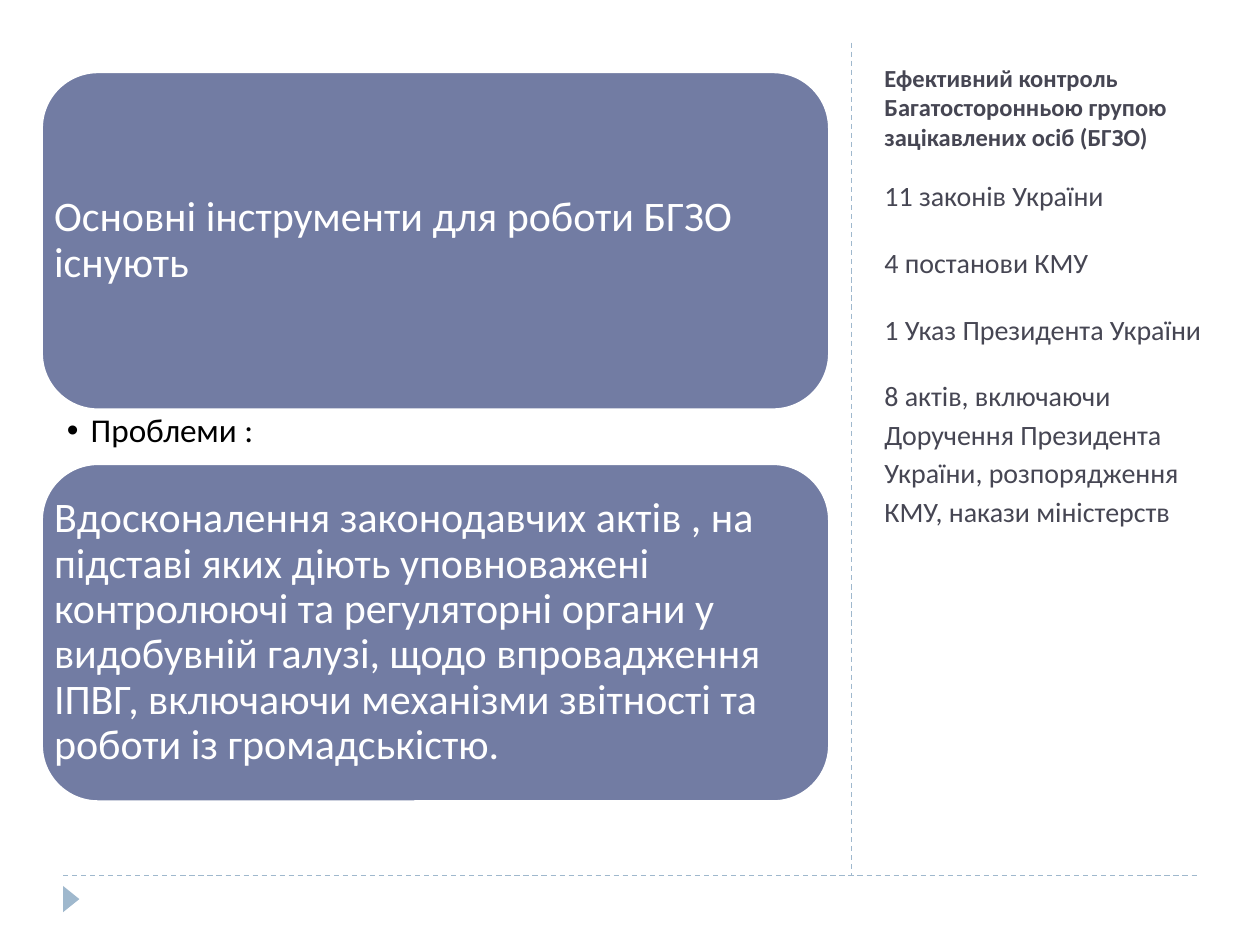
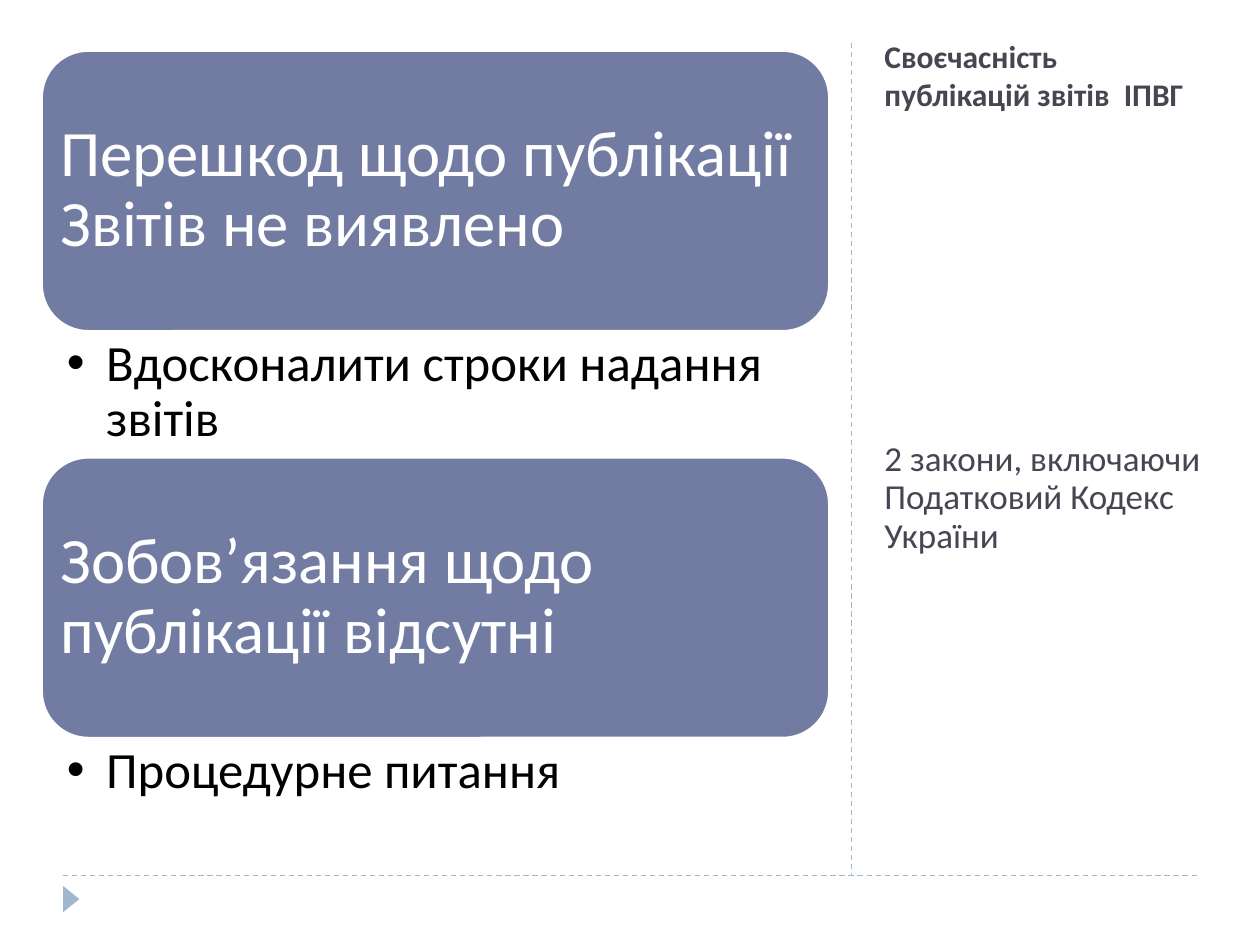
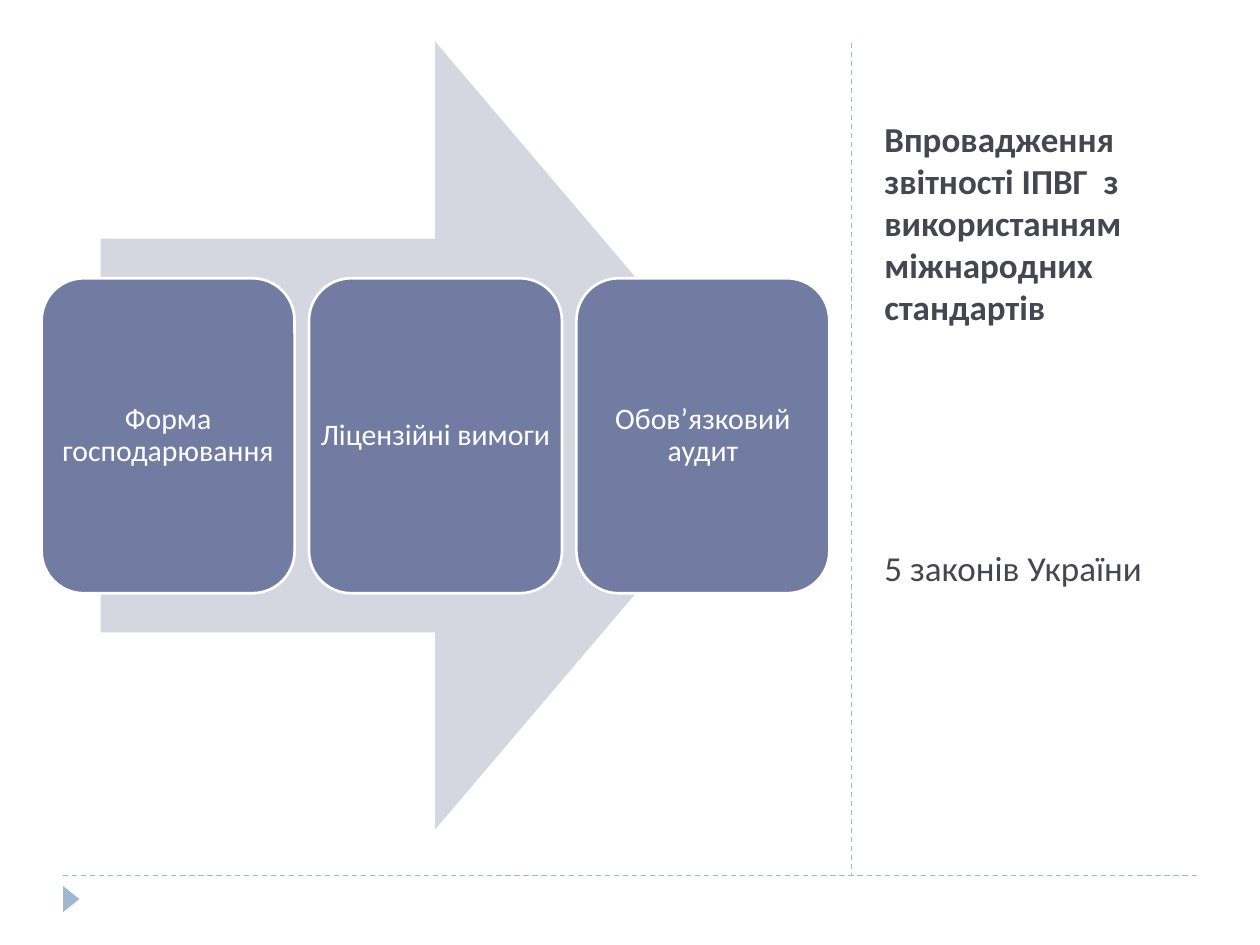
import dataclasses
import typing

import lxml.etree
import pptx
import pptx.dml.color
import pptx.enum.dml
import pptx.enum.shapes
import pptx.enum.text
import pptx.oxml.ns
import pptx.presentation
import pptx.shapes.autoshape
import pptx.slide
import pptx.text.text
import pptx.util

Cm = pptx.util.Cm
Pt = pptx.util.Pt
RGBColor = pptx.dml.color.RGBColor
Shape = pptx.enum.shapes.MSO_SHAPE
Anchor = pptx.enum.text.MSO_ANCHOR
Align = pptx.enum.text.PP_ALIGN

WHITE = RGBColor(0xFF, 0xFF, 0xFF)
BLACK = RGBColor(0x00, 0x00, 0x00)
SLATE = RGBColor(0x46, 0x46, 0x53)
INDIGO = RGBColor(0x72, 0x7C, 0xA3)
PALE_INDIGO = RGBColor(0xD5, 0xD7, 0xE0)
SKY = RGBColor(0x9F, 0xB8, 0xCD)

FONT = "Calibri"
MAIN_LEFT, MAIN_WIDTH = 0.84, 15.88
SIDE_LEFT, SIDE_WIDTH = 17.58, 6.98
CONTENT_TOP, CONTENT_BOTTOM = 0.84, 16.84


@dataclasses.dataclass(frozen=True)
class Box:
    """A rectangle in centimetres."""
    left: float
    top: float
    width: float
    height: float

    def lengths(self) -> tuple[pptx.util.Length, ...]:
        return Cm(self.left), Cm(self.top), Cm(self.width), Cm(self.height)


@dataclasses.dataclass(frozen=True)
class TextStyle:
    size: float
    color: RGBColor
    bold: bool = False
    align: Align = Align.LEFT
    anchor: Anchor = Anchor.TOP
    line_spacing: float | pptx.util.Length = 1.0
    space_before: float = 0
    space_after: float = 0
    insets: tuple[float, float, float, float] = (0.25, 0.13, 0.25, 0.13)
    bullet_indent: float = 0


@dataclasses.dataclass(frozen=True)
class Sidebar:
    title: str
    title_size: float
    title_bottom: float
    body: tuple[str, ...]
    body_size: float
    body_top: float


@dataclasses.dataclass(frozen=True)
class Card:
    text: str
    bullet: str = ""
    bullet_height: float = 0


@dataclasses.dataclass(frozen=True)
class CardStack:
    top: float
    card_height: float
    card_style: TextStyle
    bullet_style: TextStyle
    cards: tuple[Card, ...]


def card_style(size: float, inset: float, align: Align = Align.LEFT) -> TextStyle:
    return TextStyle(size, WHITE, align=align, anchor=Anchor.MIDDLE,
                     line_spacing=0.9, insets=(inset,) * 4)


def bullet_style(size: float, right: float, vertical: float, indent: float) -> TextStyle:
    return TextStyle(size, BLACK, line_spacing=0.9, bullet_indent=indent,
                     insets=(0.51, vertical, right, vertical))


def add_bullet(paragraph: pptx.text.text._Paragraph, indent: float) -> None:
    properties = paragraph._p.get_or_add_pPr()
    properties.set("marL", str(Cm(indent)))
    properties.set("indent", str(-Cm(indent)))
    qn = pptx.oxml.ns.qn
    lxml.etree.SubElement(properties, qn("a:buFont"), typeface="Arial")
    lxml.etree.SubElement(properties, qn("a:buChar"), char="•")


def add_text(slide: pptx.slide.Slide, box: Box, texts: typing.Sequence[str],
             style: TextStyle) -> None:
    frame = slide.shapes.add_textbox(*box.lengths()).text_frame
    frame.word_wrap = True
    frame.vertical_anchor = style.anchor
    (frame.margin_left, frame.margin_top,
     frame.margin_right, frame.margin_bottom) = map(Cm, style.insets)
    for index, text in enumerate(texts):
        paragraph = frame.add_paragraph() if index else frame.paragraphs[0]
        paragraph.alignment = style.align
        paragraph.line_spacing = style.line_spacing
        paragraph.space_before = Pt(style.space_before)
        paragraph.space_after = Pt(style.space_after)
        if style.bullet_indent:
            add_bullet(paragraph, style.bullet_indent)
        run = paragraph.add_run()
        run.text = text
        run.font.name = FONT
        run.font.size = Pt(style.size)
        run.font.bold = style.bold
        run.font.color.rgb = style.color


def add_filled_shape(slide: pptx.slide.Slide, kind: Shape, box: Box, fill: RGBColor,
                     outline: RGBColor | None = None) -> pptx.shapes.autoshape.Shape:
    shape = slide.shapes.add_shape(kind, *box.lengths())
    shape.shadow.inherit = False
    shape.fill.solid()
    shape.fill.fore_color.rgb = fill
    if outline is None:
        shape.line.fill.background()
    else:
        shape.line.color.rgb = outline
        shape.line.width = Pt(1.5)
    return shape


def add_dashed_line(slide: pptx.slide.Slide, left: float, top: float,
                    right: float, bottom: float) -> None:
    line = slide.shapes.add_connector(pptx.enum.shapes.MSO_CONNECTOR.STRAIGHT,
                                      Cm(left), Cm(top), Cm(right), Cm(bottom))
    line.line.color.rgb = SKY
    line.line.width = Pt(0.75)
    line.line.dash_style = pptx.enum.dml.MSO_LINE.DASH
    lxml.etree.SubElement(line._element.spPr, pptx.oxml.ns.qn("a:effectLst"))


def add_card(slide: pptx.slide.Slide, box: Box, text: str, style: TextStyle) -> None:
    add_filled_shape(slide, Shape.ROUNDED_RECTANGLE, box, INDIGO, WHITE)
    add_text(slide, box, [text], style)


def add_framed_slide(presentation: pptx.presentation.Presentation,
                     sidebar: Sidebar) -> pptx.slide.Slide:
    """Add a slide with the dashed rules, the corner marker and its sidebar."""
    slide = presentation.slides.add_slide(presentation.slide_layouts[6])
    add_dashed_line(slide, 1.27, 17.65, 24.13, 17.65)
    add_dashed_line(slide, 17.17, 0.86, 17.17, 17.63)
    marker = add_filled_shape(slide, Shape.ISOSCELES_TRIANGLE,
                              Box(1.17, 17.96, 0.53, 0.33), SKY)
    marker.rotation = 90

    add_text(slide, Box(SIDE_LEFT, CONTENT_TOP, SIDE_WIDTH,
                        sidebar.title_bottom - CONTENT_TOP), [sidebar.title],
             TextStyle(sidebar.title_size, SLATE, bold=True, anchor=Anchor.BOTTOM))
    add_text(slide, Box(SIDE_LEFT, sidebar.body_top, SIDE_WIDTH,
                        CONTENT_BOTTOM - sidebar.body_top), sidebar.body,
             TextStyle(sidebar.body_size, SLATE, line_spacing=Pt(22),
                       space_before=6, space_after=10))
    return slide


def add_card_stack(slide: pptx.slide.Slide, stack: CardStack) -> None:
    top = stack.top
    for card in stack.cards:
        add_card(slide, Box(MAIN_LEFT, top, MAIN_WIDTH, stack.card_height),
                 card.text, stack.card_style)
        top += stack.card_height
        if card.bullet:
            add_text(slide, Box(MAIN_LEFT, top, MAIN_WIDTH, card.bullet_height),
                     [card.bullet], stack.bullet_style)
            top += card.bullet_height


def add_arrow_process(slide: pptx.slide.Slide, steps: typing.Sequence[str]) -> None:
    add_filled_shape(slide, Shape.RIGHT_ARROW,
                     Box(2.03, CONTENT_TOP, 13.49, MAIN_WIDTH), PALE_INDIGO)
    step_width = 5.1
    pitch = (MAIN_WIDTH - step_width) / (len(steps) - 1)
    for index, step in enumerate(steps):
        add_card(slide, Box(MAIN_LEFT + index * pitch, 5.61, step_width, 6.35),
                 step, card_style(17, 0.18, Align.CENTER))


CONTROL_SIDEBAR = Sidebar(
    "Ефективний контроль Багатосторонньою групою зацікавлених осіб (БГЗО)", 14, 3.18,
    ("11 законів України", "4 постанови КМУ", "1 Указ Президента України",
     "8 актів, включаючи Доручення Президента України, розпорядження КМУ, "
     "накази міністерств"), 16, 3.38)

CONTROL_STACK = CardStack(
    1.45, 6.81, card_style(24, 0.25), bullet_style(19, 0.48, 0.08, 0.48),
    (Card("Основні інструменти для роботи БГЗО існують", "Проблеми :", 1.09),
     Card("Вдосконалення законодавчих актів , на підставі яких діють уповноважені "
          "контролюючі та регуляторні органи у видобувній галузі, щодо впровадження "
          "ІПВГ, включаючи механізми звітності та роботи із громадськістю.")))

TIMELINESS_SIDEBAR = Sidebar(
    "Своєчасність публікацій звітів  ІПВГ", 18, 2.41,
    ("2 закони, включаючи Податковий Кодекс України",), 20, 8.74)

TIMELINESS_STACK = CardStack(
    1.02, 5.66, card_style(37, 0.38), bullet_style(29, 0.74, 0.13, 0.79),
    (Card("Перешкод щодо публікації Звітів не виявлено",
          "Вдосконалити строки надання звітів", 2.54),
     Card("Зобов’язання щодо публікації відсутні", "Процедурне питання", 1.7)))

STANDARDS_SIDEBAR = Sidebar(
    "Впровадження звітності ІПВГ  з використанням міжнародних стандартів", 20, 6.73,
    ("5 законів України",), 20, 10.95)

STANDARDS_STEPS = ("Форма господарювання", "Ліцензійні вимоги", "Обов’язковий аудит")


def main() -> None:
    presentation = pptx.Presentation()
    presentation.slide_width = Cm(25.4)
    presentation.slide_height = Cm(19.05)
    add_card_stack(add_framed_slide(presentation, CONTROL_SIDEBAR), CONTROL_STACK)
    add_card_stack(add_framed_slide(presentation, TIMELINESS_SIDEBAR), TIMELINESS_STACK)
    add_arrow_process(add_framed_slide(presentation, STANDARDS_SIDEBAR), STANDARDS_STEPS)
    presentation.save("out.pptx")


if __name__ == "__main__":
    main()
